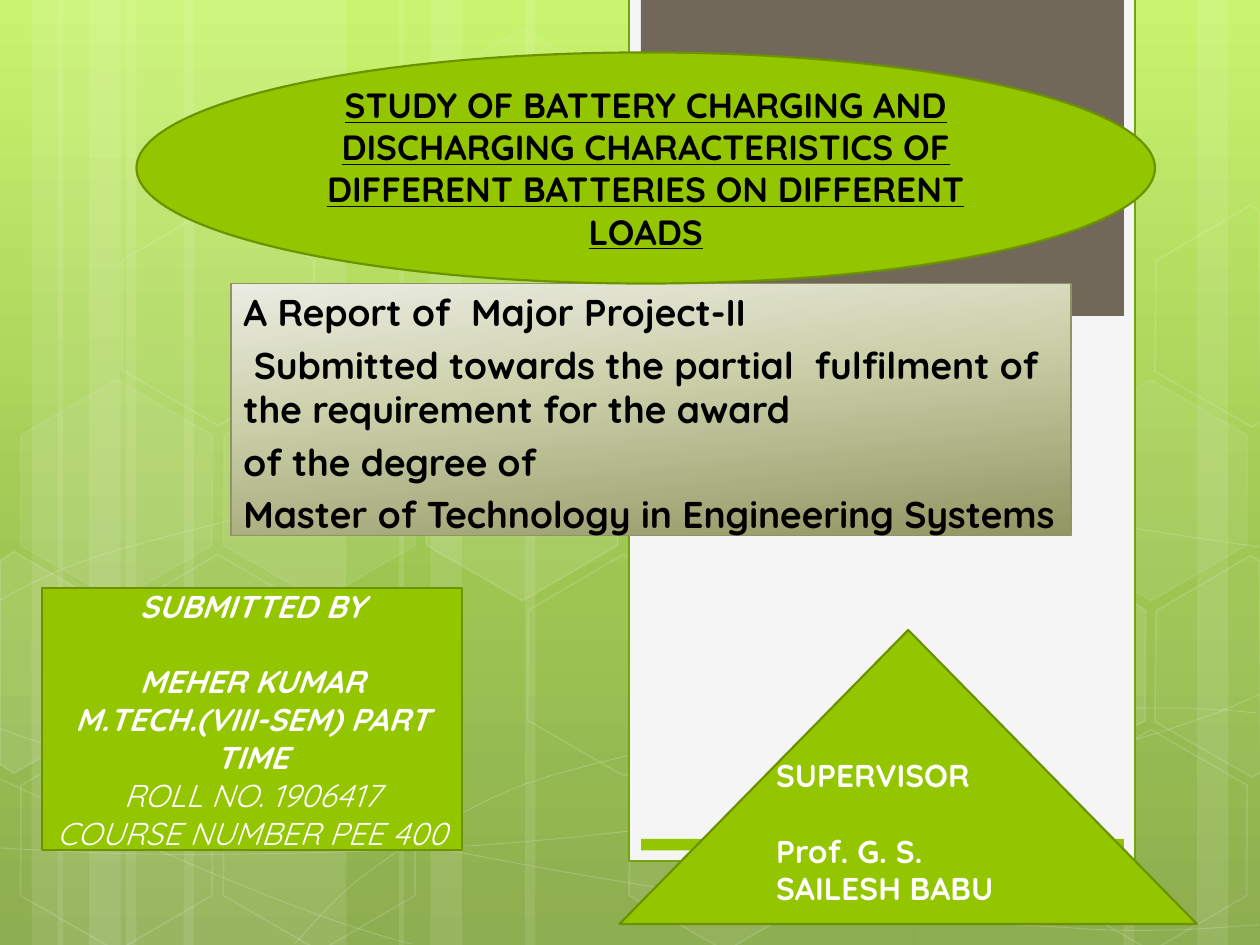
from copy import deepcopy
from dataclasses import dataclass
from math import cos, radians, sin
from typing import NamedTuple, Optional

from lxml.etree import SubElement
from pptx import Presentation
from pptx.dml.color import RGBColor as RGB
from pptx.enum.shapes import MSO_SHAPE as Shape
from pptx.enum.text import MSO_ANCHOR as Anchor, MSO_AUTO_SIZE as AutoSize, PP_ALIGN as Align
from pptx.oxml.ns import qn
from pptx.util import Emu, Inches, Pt

WIDTH, HEIGHT = Inches(10), Inches(7.5)
CELL = WIDTH / 120      # layout grid: 120 columns by 90 rows
SHARE = WIDTH / 100     # artwork: hundredths of the slide width
TILT = 30               # rotation of every hexagon, in degrees


@dataclass(frozen=True)
class Theme:
    font: str = "Quicksand"
    title_size: float = 20
    report_size: float = 21.3
    card_size: float = 18
    line_gap: float = 21.6
    white: str = "FFFFFF"
    black: str = "000000"
    green: str = "94C600"
    green_edge: str = "6D9200"
    panel: str = "F5F5F5"
    panel_edge: str = "74A510"
    brown: str = "71685A"
    olive_edge: str = "909465"
    backdrop: tuple = ((0, "C3F35F"), (62, "93BF3F"), (100, "81A53E"))
    olive: tuple = ((0, "EBECE3"), (40, "CDD1AB"), (100, "929663"))


class Box(NamedTuple):
    left: float
    top: float
    width: float
    height: float


class Hexagon(NamedTuple):
    column: float
    row: float
    fill_alpha: Optional[int]
    line_alpha: int


class CutHexagon(NamedTuple):
    corners: list
    center: tuple
    top: float
    fill_alpha: Optional[int]


class Line(NamedTuple):
    text: str
    bold: bool = True
    italic: bool = False
    underline: bool = False
    gap: float = 0


THEME = Theme()

# Band left edges and widths, in grid columns
BANDS = [(12, 21), (0, 6), (3, 10), (17.5, 21), (5.5, 6), (8.5, 10),
         (87, 21), (114, 6), (107, 10), (50, 37), (38, 6), (41, 10)]

# Start point, then cubic segments of three points each, in shares
ARCS = [
    [(-.1, 67.3), (5.3, 67.6), (10.7, 67.9), (18.2, 67.8), (25.7, 67.7), (34.9, 67.5), (44.9, 66.5),
     (55, 65.5), (69.2, 63.6), (78.3, 61.7), (87.5, 59.8), (96.8, 56.8), (99.9, 55.1)],
    [(-.1, 47.7), (2.7, 46.1), (5.6, 44.6), (11.3, 43.1), (17, 41.6), (25, 39.4), (33.9, 38.7),
     (42.8, 38), (53.5, 37.9), (64.5, 38.7), (75.5, 39.5), (93.9, 42.6), (99.9, 43.4)],
    [(-.3, 61.7), (11.8, 67.2), (23.9, 72.7), (32.6, 74.9)],
    [(-.1, 57.8), (3, 58.9), (6.1, 60), (11.9, 61.6), (17.8, 63.1), (26.5, 65.6), (34.8, 67.3),
     (43.1, 69), (53.7, 70.8), (61.9, 71.8), (70.2, 72.9), (79.1, 73.3), (84.4, 73.6),
     (89.7, 74), (91.1, 73.8), (93.6, 73.8), (96.2, 73.7), (98, 73.5), (99.9, 73.4)],
    [(23.4, 74.9), (25.2, 72.9), (26.9, 70.9), (29.4, 69.1), (31.8, 67.3), (35.1, 65.3), (37.9, 63.9),
     (40.7, 62.5), (42.4, 61.9), (46.1, 60.9), (49.8, 59.9), (56.5, 58.5), (60, 57.8),
     (63.5, 57.1), (64, 57.1), (67.1, 56.9), (70.2, 56.6), (75.1, 56.3), (78.6, 56.2),
     (82, 56.1), (87.8, 56.2), (87.8, 56.2), (90, 56.2), (92.2, 56.2), (94.4, 56.2),
     (96.3, 56.3), (97.9, 56.4), (98.8, 56.5), (99.7, 56.6), (99.4, 56.5), (99.7, 56.6)],
]

HEXAGONS = [Hexagon(*h) for h in [
    (4, 2, 10, 12), (5, 3, None, 12), (5, 1, 7, 8), (4, 0, 4, 8), (6, 4, 6, 12),
    (0, 4, None, 12), (0, 2, 7, 8), (1, 3, None, 12), (2, 4, None, 12), (2, 2, 7, 8),
    (1, 1, None, 12), (9.2, 3, 10, 12), (10.2, 4, None, 12), (10.2, 2, 7, 8)]]

# Hexagons cut by the slide edge
LEFT_CUT = [(0, 0), (1.1, -.7), (8.7, 3.7), (8.7, 12.5), (1.1, 16.9), (0, 16.2)]
RIGHT_CUT = [(91.8, 4.4), (99.3, 0), (100, .5), (100.1, 17.2), (99.4, 17.6), (91.7, 13.2)]
CUT_HEXAGONS = [CutHexagon(LEFT_CUT, (2.7, 9), 44.5, 10),
                CutHexagon(RIGHT_CUT, (97.6, 7.9), 44.1, 4),
                CutHexagon(RIGHT_CUT, (97.6, 7.9), 16.3, None)]


def set_alpha(fill_parent, percent: int) -> None:
    color = fill_parent.find(qn("a:solidFill")).find(qn("a:srgbClr"))
    SubElement(color, qn("a:alpha"), val=str(percent * 1000))


def style(shape, fill: Optional[str] = None, edge: Optional[str] = None, weight: float = 1,
          fill_alpha: Optional[int] = None, edge_alpha: Optional[int] = None) -> None:
    shape.shadow.inherit = False
    properties = shape._element.spPr
    if fill:
        shape.fill.solid()
        shape.fill.fore_color.rgb = RGB.from_string(fill)
        if fill_alpha:
            set_alpha(properties, fill_alpha)
    else:
        shape.fill.background()
    if edge:
        shape.line.color.rgb = RGB.from_string(edge)
        shape.line.width = Pt(weight)
        if edge_alpha:
            set_alpha(properties.find(qn("a:ln")), edge_alpha)
    else:
        shape.line.fill.background()


def blend(fill, stops: tuple, angle: float) -> None:
    fill.gradient()
    fill.gradient_angle = 360 - angle
    first = fill.gradient_stops[0]._gs
    while len(fill.gradient_stops) < len(stops):
        first.addnext(deepcopy(first))
    for stop, (position, color) in zip(fill.gradient_stops, stops):
        stop.position = position / 100
        stop.color.rgb = RGB.from_string(color)


def add_preset(slide, preset, box: Box, unit: float = CELL):
    return slide.shapes.add_shape(preset, *(Emu(round(v * unit)) for v in box))


def add_outline(slide, points: list, closed: bool):
    pen = [(round(x * SHARE), round(y * SHARE)) for x, y in points]
    builder = slide.shapes.build_freeform(*pen[0])
    builder.add_line_segments(pen[1:], close=closed)
    return builder.convert_to_shape()


def add_arc(slide, points: list):
    arc = add_outline(slide, points, False)
    segments = list(arc._element.spPr.iter(qn("a:lnTo")))
    for i in range(0, len(segments), 3):  # three points make one cubic curve
        track = segments[i].getparent()
        curve = SubElement(track, qn("a:cubicBezTo"))
        for segment in segments[i:i + 3]:
            curve.append(segment[0])
            track.remove(segment)
    return arc


def untilt(point: tuple, center: tuple) -> tuple:
    x, y = point[0] - center[0], point[1] - center[1]
    c, s = cos(radians(TILT)), sin(radians(TILT))
    return center[0] + x * c + y * s, center[1] - x * s + y * c


def write(shape, lines: list[Line], size: float, color: str,
          align=Align.LEFT, anchor=Anchor.MIDDLE) -> None:
    frame = shape.text_frame
    frame.word_wrap, frame.auto_size, frame.vertical_anchor = True, AutoSize.NONE, anchor
    for i, line in enumerate(lines):
        paragraph = frame.add_paragraph() if i else frame.paragraphs[0]
        paragraph.alignment, paragraph.space_before = align, Pt(line.gap)
        run = paragraph.add_run()
        run.text = line.text
        font = run.font
        font.name, font.size, font.color.rgb = THEME.font, Pt(size), RGB.from_string(color)
        font.bold, font.italic, font.underline = line.bold, line.italic, line.underline


def draw_backdrop(slide) -> None:
    blend(slide.background.fill, THEME.backdrop, 90)
    for left, width in BANDS:
        style(add_preset(slide, Shape.RECTANGLE, Box(left, 0, width, 90)), THEME.white, fill_alpha=10)
    for arc in ARCS:
        style(add_arc(slide, arc), edge=THEME.white, weight=.5, edge_alpha=20)
    for cell in HEXAGONS:
        box = Box(.5 + 8.05 * cell.column, 3.5 + 13.9 * cell.row, 17.5, 15.2)
        hexagon = add_preset(slide, Shape.HEXAGON, box, SHARE)
        hexagon.adjustments[0], hexagon.rotation = .285, TILT
        style(hexagon, THEME.white if cell.fill_alpha else None, THEME.white, 1,
              cell.fill_alpha, cell.line_alpha)
    for corners, center, top, alpha in CUT_HEXAGONS:
        level = [untilt(corner, center) for corner in corners]
        cut = add_outline(slide, [(x, y + top) for x, y in level], True)
        cut.rotation = TILT
        style(cut, THEME.white if alpha else None, THEME.white, 1, alpha, 12)


def draw_panel(slide) -> None:
    style(add_preset(slide, Shape.RECTANGLE, Box(59.9, -.2, 48.2, 82.2)), THEME.panel, THEME.panel_edge, 1.25)
    style(add_preset(slide, Shape.RECTANGLE, Box(61.03, -.2, 46, 30.3)), THEME.brown)
    style(add_preset(slide, Shape.RECTANGLE, Box(61.05, 79.9, 46, 1.1)), THEME.green)


def main() -> None:
    deck = Presentation()
    deck.slide_width, deck.slide_height = WIDTH, HEIGHT
    slide = deck.slides.add_slide(deck.slide_layouts[6])
    draw_backdrop(slide)
    draw_panel(slide)

    # Report statement
    report = add_preset(slide, Shape.RECTANGLE, Box(22, 27, 80, 24))
    style(report, edge=THEME.olive_edge, weight=.75)
    blend(report.fill, THEME.olive, 84)
    write(report, [Line(text, gap=4.3) for text in (
        "A Report of  Major Project-II",
        " Submitted towards the partial  fulfilment of the requirement for the award",
        "of the degree of", "Master of Technology in Engineering Systems")],
        THEME.report_size, THEME.black, anchor=Anchor.TOP)

    # Student card
    student = add_preset(slide, Shape.RECTANGLE, Box(4, 56, 40, 25))
    style(student, THEME.green, THEME.green_edge, 1.25)
    write(student, [Line("SUBMITTED BY", italic=True),
                    Line("MEHER KUMAR", italic=True, gap=THEME.line_gap),
                    Line("M.TECH.(VIII-SEM) PART TIME", italic=True),
                    Line("ROLL NO. 1906417", bold=False, italic=True),
                    Line("COURSE NUMBER PEE 400", bold=False, italic=True)],
          THEME.card_size, THEME.white, Align.CENTER)

    # Supervisor triangle
    supervisor = add_preset(slide, Shape.ISOSCELES_TRIANGLE, Box(59, 60, 55, 28))
    style(supervisor, THEME.green, THEME.green_edge, 1.25)
    supervisor.text_frame.margin_bottom = Inches(.35)
    write(supervisor, [Line("SUPERVISOR"), Line("Prof. G. S. SAILESH BABU", gap=THEME.line_gap)],
          THEME.card_size, THEME.white)

    # Project heading
    heading = add_preset(slide, Shape.OVAL, Box(13, 5, 97, 22))
    style(heading, THEME.green, THEME.green_edge, 1.25)
    write(heading, [Line("STUDY OF BATTERY CHARGING AND DISCHARGING CHARACTERISTICS OF "
                         "DIFFERENT BATTERIES ON DIFFERENT LOADS", underline=True)],
          THEME.title_size, THEME.black, Align.CENTER)
    deck.save("out.pptx")


if __name__ == "__main__":
    main()
